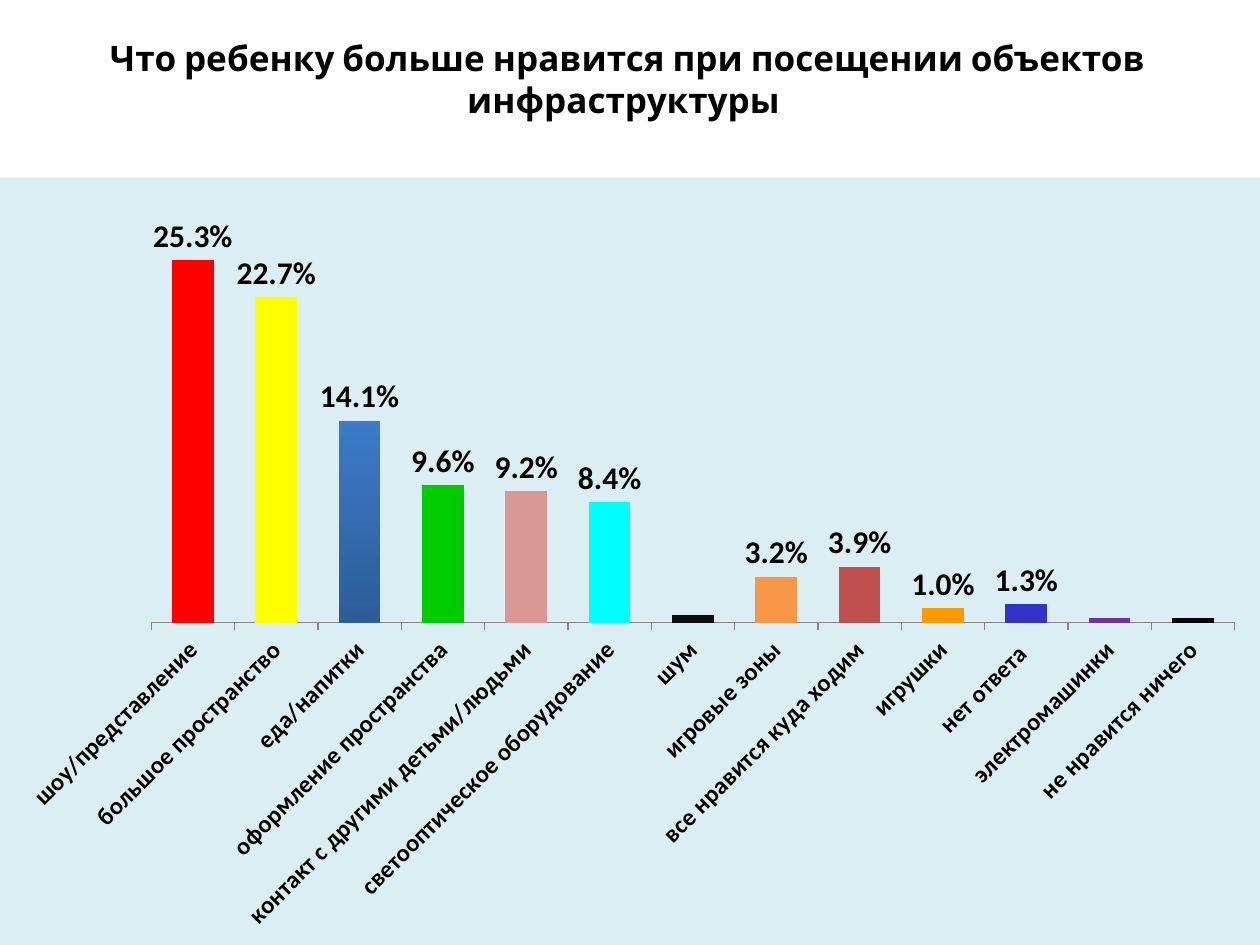
import pptx
import pptx.util
import pptx.chart.data
import pptx.enum.chart
import pptx.enum.text
import pptx.oxml
import pptx.oxml.ns
from pptx.dml.color import RGBColor
from pptx.util import Inches

BLACK = RGBColor(0x00, 0x00, 0x00)
BAR_TOP = RGBColor(0x3C, 0x7B, 0xC7)
BAR_BOTTOM = RGBColor(0x2C, 0x5D, 0x98)
PANEL = RGBColor(0xDB, 0xEE, 0xF4)
RED = RGBColor(0xFF, 0x00, 0x00)
YELLOW = RGBColor(0xFF, 0xFF, 0x00)
GREEN = RGBColor(0x00, 0xCC, 0x00)
PINK = RGBColor(0xD9, 0x96, 0x94)
CYAN = RGBColor(0x00, 0xFF, 0xFF)
SOOT = RGBColor(0x0E, 0x0C, 0x0C)
PEACH = RGBColor(0xF7, 0x96, 0x46)
BRICK = RGBColor(0xC0, 0x50, 0x4D)
ORANGE = RGBColor(0xFF, 0x99, 0x00)
BLUE = RGBColor(0x33, 0x33, 0xCC)
PURPLE = RGBColor(0x70, 0x30, 0xA0)
GREY = RGBColor(0x86, 0x86, 0x86)

# Answer, share, bar colour (None is the gradient bar)
ANSWERS = [
    ("шоу/представление", 0.253, RED),
    ("большое пространство", 0.227, YELLOW),
    ("еда/напитки", 0.141, None),
    ("оформление пространства", 0.096, GREEN),
    ("контакт с другими детьми/людьми", 0.092, PINK),
    ("светооптическое оборудование", 0.084, CYAN),
    ("шум", 0.005, SOOT),
    ("игровые зоны", 0.032, PEACH),
    ("все нравится куда ходим", 0.039, BRICK),
    ("игрушки", 0.01, ORANGE),
    ("нет ответа ", 0.013, BLUE),
    ("электромашинки", 0.003, PURPLE),
    ("не нравится ничего", 0.003, BLACK),
]
LABEL_MIN = 0.01  # smaller shares carry no label


def element(xml):
    """Parse a chart fragment whose root takes the needed namespaces."""
    head, sep, rest = xml.partition(">")
    return pptx.oxml.parse_xml(f'{head} {pptx.oxml.ns.nsdecls("c", "a")}{sep}{rest}')


class Deck:
    title_font = "Cabin"
    chart_font = "Calibri"

    def __init__(self, prs):
        self.s = prs.slides.add_slide(prs.slide_layouts[6])

    def style(self, font, name, size, bold):
        font.name, font.size, font.bold = name, pptx.util.Pt(size), bold
        font.color.rgb = BLACK

    def title(self, text, x, y, w, h):
        tf = self.s.shapes.add_textbox(Inches(x), Inches(y), Inches(w), Inches(h)).text_frame
        tf.word_wrap = True
        tf.vertical_anchor = pptx.enum.text.MSO_ANCHOR.MIDDLE
        p = tf.paragraphs[0]
        p.text = text
        p.alignment = pptx.enum.text.PP_ALIGN.CENTER
        self.style(p.font, self.title_font, 20, True)

    def column_chart(self, answers, x, y, w, h):
        data = pptx.chart.data.CategoryChartData(number_format="0.0%")
        data.categories = [name for name, _, _ in answers]
        data.add_series("Series 1", [share for _, share, _ in answers])
        chart = self.s.shapes.add_chart(
            pptx.enum.chart.XL_CHART_TYPE.COLUMN_CLUSTERED,
            Inches(x), Inches(y), Inches(w), Inches(h), data).chart
        chart.has_legend = False
        chart.has_title = False
        self.style(chart.font, self.chart_font, 10, False)
        self.axes(chart)
        self.bars(chart.plots[0], answers)
        self.panel(chart)

    def axes(self, chart):
        axis = chart.category_axis
        axis.major_tick_mark = pptx.enum.chart.XL_TICK_MARK.OUTSIDE
        axis.format.line.color.rgb = GREY
        self.style(axis.tick_labels.font, self.chart_font, 14, True)
        axis._element.txPr.bodyPr.set("rot", "-2700000")
        axis = chart.value_axis
        axis.visible = False
        axis.has_major_gridlines = False
        axis.minimum_scale, axis.maximum_scale = 0, 0.3

    def bars(self, plot, answers):
        plot.gap_width = 100
        plot.vary_by_categories = False
        series = plot.series[0]
        labels = series.data_labels
        labels.show_value = True
        labels.number_format = "0.0%"
        labels.number_format_is_linked = False
        labels.position = pptx.enum.chart.XL_LABEL_POSITION.OUTSIDE_END
        self.style(labels.font, self.chart_font, 18, True)
        hidden = 0
        for i, (_, share, color) in enumerate(answers):
            fill = series.points[i].format.fill
            if color is None:
                fill.gradient()
                fill.gradient_angle = 270
                for stop, rgb in zip(fill.gradient_stops, (BAR_TOP, BAR_BOTTOM)):
                    stop.color.rgb = rgb
            else:
                fill.solid()
                fill.fore_color.rgb = color
            if share < LABEL_MIN:
                labels._element.insert(hidden, element(
                    f'<c:dLbl><c:idx val="{i}"/><c:delete val="1"/></c:dLbl>'))
                hidden += 1

    def panel(self, chart):
        # Chart background
        space = chart._chartSpace
        space.chart.addnext(element(
            f'<c:spPr><a:solidFill><a:srgbClr val="{PANEL}"/></a:solidFill>'
            '<a:ln><a:noFill/></a:ln></c:spPr>'))
        # Inner plot area, as fractions of the chart
        area = space.chart.plotArea
        for old in area.findall(pptx.oxml.ns.qn("c:layout")):
            area.remove(old)
        box = "".join(f'<c:{k} val="{v}"/>' for k, v in
                      (("x", 0.12), ("y", 0.02), ("w", 0.86), ("h", 0.56)))
        area.insert(0, element(
            '<c:layout><c:manualLayout><c:layoutTarget val="inner"/>'
            f'<c:xMode val="edge"/><c:yMode val="edge"/>{box}</c:manualLayout></c:layout>'))


def main():
    prs = pptx.Presentation()
    prs.slide_width, prs.slide_height = Inches(10), Inches(7.5)
    deck = Deck(prs)
    deck.title("Что ребенку больше нравится при посещении объектов инфраструктуры ",
               0.23, 0, 9.5, 1.25)
    deck.column_chart(ANSWERS, 0, 1.41, 10, 6.09)
    prs.save("out.pptx")


if __name__ == "__main__":
    main()
